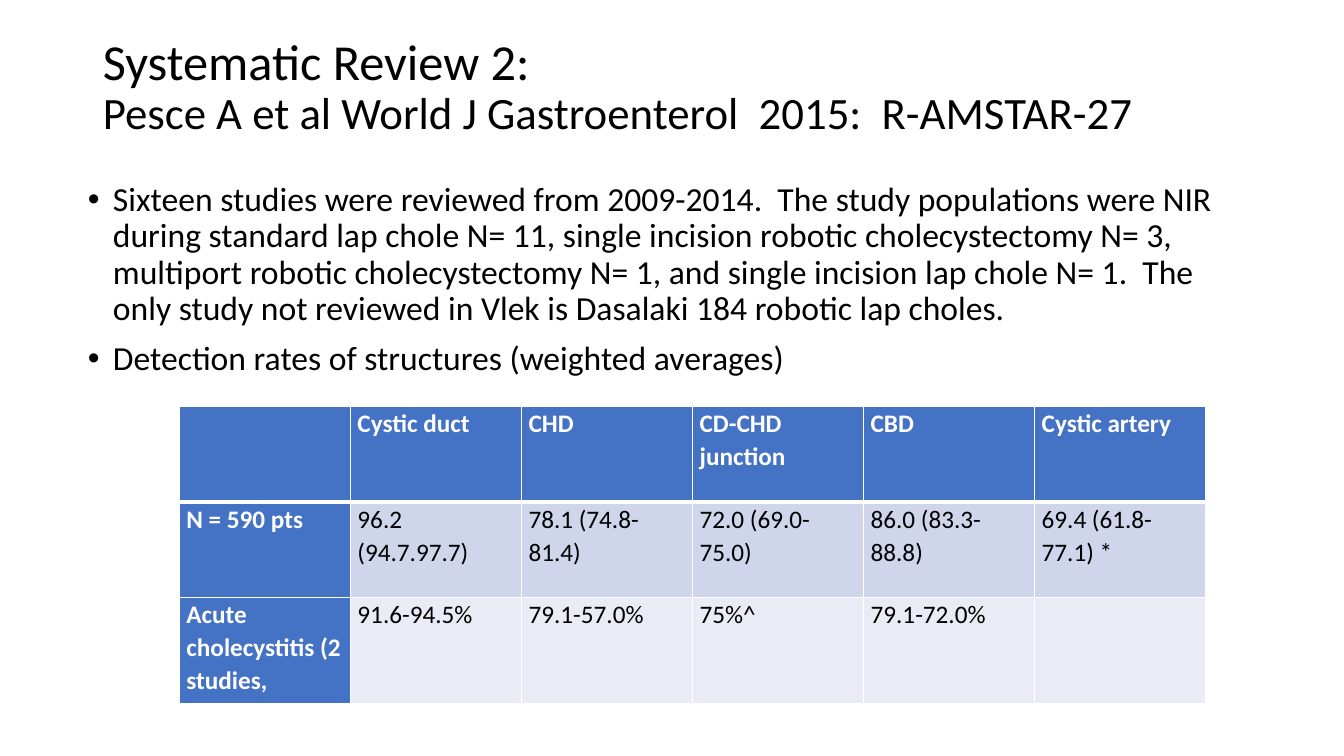
from lxml.etree import SubElement as Sub
from pptx import Presentation as Deck
from pptx.dml.color import RGBColor as Rgb
from pptx.enum.text import MSO_ANCHOR as Anchor, MSO_AUTO_SIZE as Auto, PP_ALIGN as Align
from pptx.oxml.ns import qn
from pptx.util import Inches, Pt


class Theme:
    font = "Calibri"
    ink, white = "000000", "FFFFFF"
    head, bands = "4472C4", ["CFD5EA", "E9EBF5"]
    title, cite, body, cell = 36, 32, 24, 18


def write(para, text, size, color=Theme.ink, bold=False):
    run = para.add_run()
    run.text = text
    run.font.name = Theme.font
    run.font.size = Pt(size)
    run.font.bold = bold
    run.font.color.rgb = Rgb.from_string(color)


def place(shape, left, top, wide, high):
    """Set a shape's box in percent of the slide's size."""
    shape.left, shape.width = (int(deck.slide_width * n / 100) for n in (left, wide))
    shape.top, shape.height = (int(deck.slide_height * n / 100) for n in (top, high))


deck = Deck()
deck.slide_width, deck.slide_height = Inches(13.33), Inches(7.5)
slide = deck.slides.add_slide(deck.slide_layouts[1])
title, body = slide.placeholders

# Title
place(title, 6.9, 2.8, 86.27, 17.73)
frame = title.text_frame
frame.auto_size = Auto.NONE
frame.vertical_anchor = Anchor.MIDDLE
para = frame.paragraphs[0]
para.alignment = Align.LEFT
para.line_spacing = 0.9
write(para, "Systematic Review 2:", Theme.title)
para.add_line_break()
write(para, "Pesce A et al World J Gastroenterol  2015:  R-AMSTAR-27", Theme.cite)

# Bullets
points = [
    "Sixteen studies were reviewed from 2009-2014.  The study populations were NIR "
    "during standard lap chole N= 11, single incision robotic cholecystectomy N= 3, "
    "multiport robotic cholecystectomy N= 1, and single incision lap chole N= 1.  The "
    "only study not reviewed in Vlek is Dasalaki 184 robotic lap choles.",
    "Detection rates of structures (weighted averages)",
]
place(body, 5.78, 23.47, 86.27, 63.47)
frame = body.text_frame
frame.auto_size = Auto.NONE
for i, point in enumerate(points):
    para = frame.add_paragraph() if i else frame.paragraphs[0]
    props = para._p.get_or_add_pPr()
    props.set("marL", str(Inches(0.25)))
    props.set("indent", str(-Inches(0.25)))
    Sub(props, qn("a:buFont"), typeface="Arial")
    Sub(props, qn("a:buChar"), char="•")
    para.line_spacing = 0.9
    para.space_before = Pt(10 if i else 0)
    write(para, point, Theme.body)

# Detection rates
rates = [
    ["", "Cystic duct", "CHD", "CD-CHD junction", "CBD", "Cystic artery"],
    ["N = 590 pts", "96.2 (94.7.97.7)", "78.1 (74.8-81.4)", "72.0 (69.0-75.0)",
     "86.0 (83.3-88.8)", "69.4 (61.8-77.1) *"],
    ["Acute cholecystitis (2 studies,", "91.6-94.5%", "79.1-57.0%", "75%^",
     "79.1-72.0%", ""],
]
holder = slide.shapes.add_table(len(rates), len(rates[0]), 0, 0, Inches(10.18), Inches(2.95))
place(holder, 13.35, 53.73, 76.37, 39.33)
table = holder.table
for col in table.columns:
    col.width = holder.width // len(rates[0])
for row, high in zip(table.rows, [0.95, 0.95, 1.05]):
    row.height = Inches(high)

for r, line in enumerate(rates):
    for c, text in enumerate(line):
        cell = table.cell(r, c)
        label = r == 0 or c == 0
        cell.margin_left = cell.margin_right = Inches(0.07)
        cell.margin_top = cell.margin_bottom = 0
        props = cell._tc.get_or_add_tcPr()
        for side in "LRTB":
            thick = (side == "B" and r == 0) or (side == "T" and r == 1)
            edge = Sub(props, qn("a:ln" + side), w=str(Pt(3 if thick else 1)))
            Sub(Sub(edge, qn("a:solidFill")), qn("a:srgbClr"), val=Theme.white)
        cell.fill.solid()
        cell.fill.fore_color.rgb = Rgb.from_string(Theme.head if label else Theme.bands[r - 1])
        para = cell.text_frame.paragraphs[0]
        para.line_spacing = 1.07
        if text:
            write(para, text, Theme.cell, Theme.white if label else Theme.ink, label)

deck.save("out.pptx")
